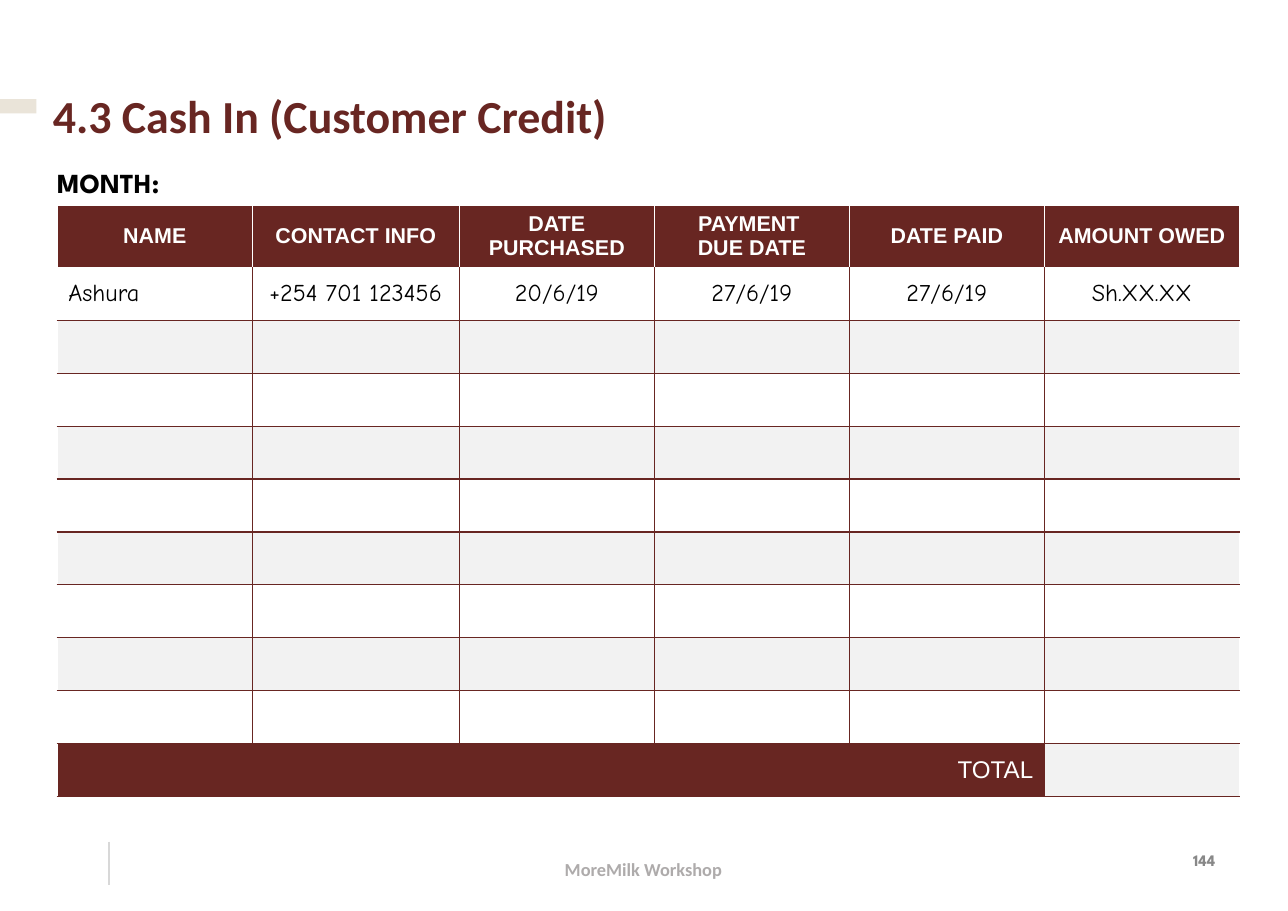
from lxml import etree
from pptx import Presentation
from pptx.dml.color import RGBColor
from pptx.enum.shapes import MSO_CONNECTOR, MSO_SHAPE
from pptx.enum.text import MSO_ANCHOR, PP_ALIGN
from pptx.oxml.ns import qn
from pptx.util import Inches, Pt

MAROON = RGBColor(0x68, 0x26, 0x22)
WHITE = RGBColor(0xFF, 0xFF, 0xFF)
BLACK = RGBColor(0x00, 0x00, 0x00)
BAND_GRAY = RGBColor(0xF2, 0xF2, 0xF2)
BEIGE = RGBColor(0xEA, 0xE4, 0xD9)
FOOTER_GRAY = RGBColor(0xAE, 0xAB, 0xAB)
NUMBER_GRAY = RGBColor(0x88, 0x88, 0x88)
RULE_GRAY = RGBColor(0xD8, 0xD8, 0xD8)

LEFT, CENTER, RIGHT = PP_ALIGN.LEFT, PP_ALIGN.CENTER, PP_ALIGN.RIGHT
TOP, MIDDLE = MSO_ANCHOR.TOP, MSO_ANCHOR.MIDDLE
RECTANGLE = MSO_SHAPE.RECTANGLE
STRAIGHT = MSO_CONNECTOR.STRAIGHT

FORMATS = {
    "title": {"name": "Calibri", "size": Pt(30), "bold": True},
    "month": {"name": "League Spartan", "size": Pt(18), "bold": True},
    "header": {"name": "Arial", "size": Pt(14), "bold": True},
    "entry": {"name": "Comic Neue", "size": Pt(15.8), "bold": False},
    "total": {"name": "Arial", "size": Pt(15.8), "bold": False},
    "footer": {"name": "Calibri", "size": Pt(12), "bold": True},
    "number": {"name": "League Spartan", "size": Pt(10.5), "bold": True},
}

HEADERS = ["NAME", "CONTACT INFO", "DATE PURCHASED", "PAYMENT \vDUE DATE",
           "DATE PAID", "AMOUNT OWED"]
EXAMPLE_CREDIT = ["Ashura", "+254 701 123456", "20/6/19", "27/6/19",
                  "27/6/19", "Sh.XX.XX"]
COLUMN_WIDTHS = [1.77, 1.88, 1.77, 1.77, 1.77, 1.77]
ROW_HEIGHTS = [0.57] + [0.48] * 10


class CreditSlide:
    def __init__(self, presentation):
        self.slide = presentation.slides.add_slide(presentation.slide_layouts[6])
        self.shapes = self.slide.shapes

    def set_text(self, paragraph, text, style, color, align=LEFT):
        paragraph.text = text
        paragraph.alignment = align
        for run in paragraph.runs:
            for attribute, value in FORMATS[style].items():
                setattr(run.font, attribute, value)
            run.font.color.rgb = color
        for line_break in paragraph._p.findall(qn("a:br")):
            size = round(FORMATS[style]["size"].pt * 100)
            etree.SubElement(line_break, qn("a:rPr"), sz=str(size))

    def text(self, box, text, style, color, align=LEFT, anchor=TOP,
             insets=(0.1, 0.05, 0.1, 0.05), spacing=None):
        frame = self.shapes.add_textbox(*map(Inches, box)).text_frame
        frame.word_wrap = True
        frame.vertical_anchor = anchor
        for side, inset in zip(("left", "top", "right", "bottom"), insets):
            setattr(frame, f"margin_{side}", Inches(inset))
        paragraph = frame.paragraphs[0]
        self.set_text(paragraph, text, style, color, align)
        paragraph.line_spacing = spacing

    def bar(self, box, color):
        bar = self.shapes.add_shape(RECTANGLE, *map(Inches, box))
        bar.shadow.inherit = False
        bar.fill.solid()
        bar.fill.fore_color.rgb = color
        bar.line.fill.background()

    def rule(self, ends, color, width):
        rule = self.shapes.add_connector(STRAIGHT, *map(Inches, ends))
        rule.line.color.rgb = color
        rule.line.width = Pt(width)
        etree.SubElement(rule._element.spPr, qn("a:effectLst"))

    def paint_cell(self, cell, fill, border, sides):
        """Draw 1 pt borders on the given sides (of L, R, T, B) and fill the cell."""
        properties = cell._tc.get_or_add_tcPr()
        for side in sides:
            line = etree.SubElement(properties, qn(f"a:ln{side}"), w=str(Pt(1)))
            solid = etree.SubElement(line, qn("a:solidFill"))
            etree.SubElement(solid, qn("a:srgbClr"), val=str(border))
        cell.fill.solid()
        cell.fill.fore_color.rgb = fill

    def credit_table(self, left, top):
        last_row, last_column = len(ROW_HEIGHTS) - 1, len(COLUMN_WIDTHS) - 1
        size = sum(COLUMN_WIDTHS), sum(ROW_HEIGHTS)
        table = self.shapes.add_table(last_row + 1, last_column + 1,
                                      *map(Inches, (left, top, *size))).table
        table.first_row = table.horz_banding = False
        for column, width in zip(table.columns, COLUMN_WIDTHS):
            column.width = Inches(width)
        for row, height in zip(table.rows, ROW_HEIGHTS):
            row.height = Inches(height)

        for r in range(last_row + 1):
            for c in range(last_column + 1):
                cell = table.cell(r, c)
                cell.vertical_anchor = MIDDLE
                if r == 0:
                    self.paint_cell(cell, MAROON, WHITE, "LRT")
                    continue
                sides = "L" * (c > 0) + "R" * (c < last_column) + "T" * (r > 1) + "B"
                is_total = r == last_row and c < last_column
                fill = MAROON if is_total else WHITE if r % 2 else BAND_GRAY
                self.paint_cell(cell, fill, MAROON, sides)

        for c, (header, entry) in enumerate(zip(HEADERS, EXAMPLE_CREDIT)):
            self.set_text(table.cell(0, c).text_frame.paragraphs[0], header,
                          "header", WHITE, CENTER)
            self.set_text(table.cell(1, c).text_frame.paragraphs[0], entry,
                          "entry", BLACK, CENTER if c else LEFT)
        total = table.cell(last_row, 0)
        total.merge(table.cell(last_row, last_column - 1))
        self.set_text(total.text_frame.paragraphs[0], "TOTAL", "total", WHITE, RIGHT)


def main():
    presentation = Presentation()
    presentation.slide_width = Inches(11.69)
    presentation.slide_height = Inches(8.27)
    page = CreditSlide(presentation)

    page.text((4.37, 7.59, 2.94, 0.55), "MoreMilk Workshop", "footer", FOOTER_GRAY,
              CENTER, MIDDLE, insets=(0.1, 0.05, 0.1, 0))
    page.text((10.68, 7.61, 0.5, 0.4), "144", "number", NUMBER_GRAY, CENTER, MIDDLE)
    page.rule((0.99, 7.64, 0.99, 8.03), RULE_GRAY, 0.75)
    page.bar((0, 0.9, 0.33, 0.13), BEIGE)
    page.text((0.28, 0.16, 10.97, 1.13), "4.3 Cash In (Customer Credit)", "title",
              MAROON, insets=(0.2, 0.59, 0.1, 0.05), spacing=1.1)
    page.credit_table(0.52, 1.86)
    page.text((0.42, 1.46, 3.91, 0.4), "MONTH:", "month", BLACK)

    presentation.save("out.pptx")


if __name__ == "__main__":
    main()
